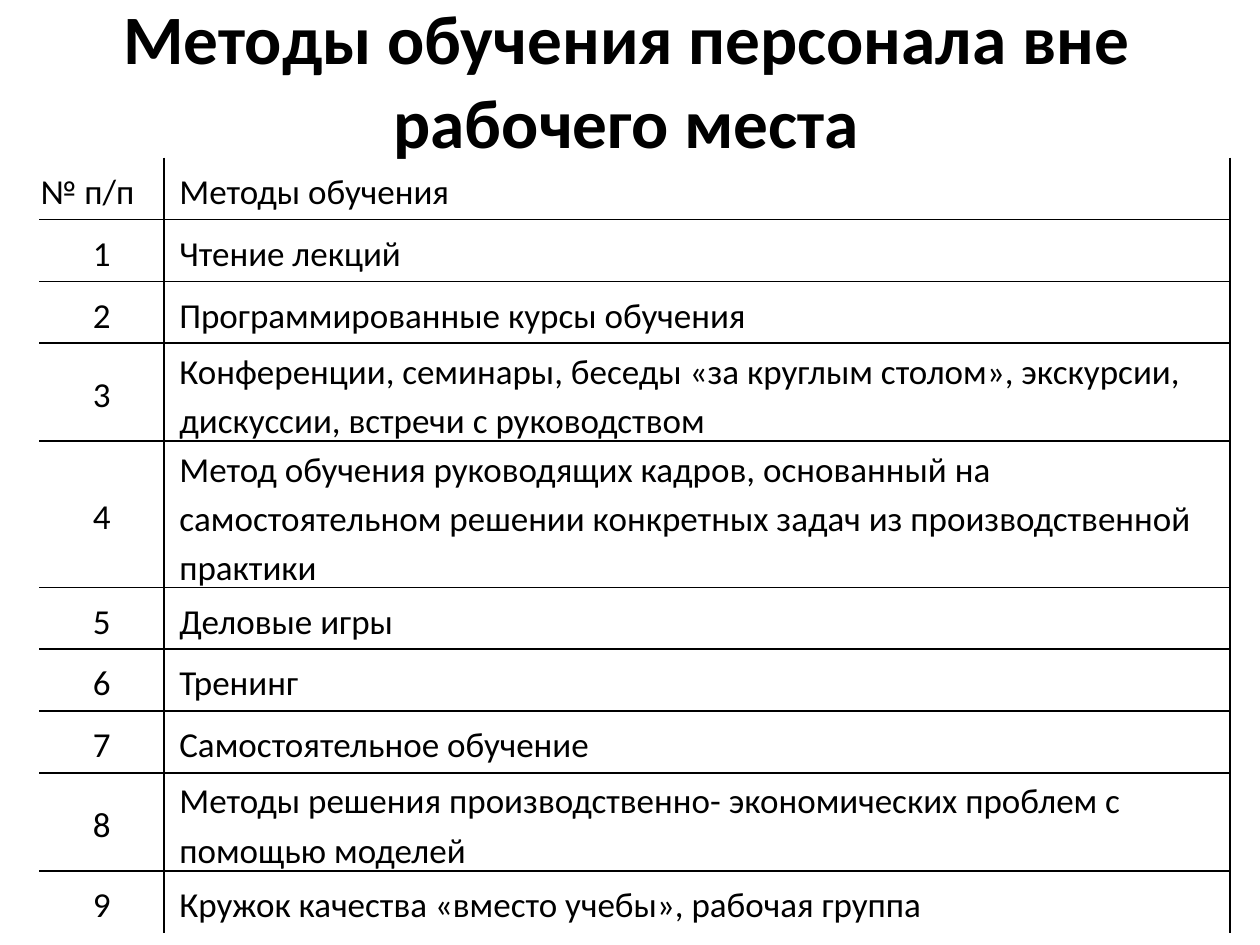
import pptx
import pptx.dml.color
import pptx.enum.text
import pptx.oxml.ns
import pptx.util
from lxml import etree

Pt = pptx.util.Pt
Align = pptx.enum.text.PP_ALIGN
Anchor = pptx.enum.text.MSO_ANCHOR
qn = pptx.oxml.ns.qn

BLACK = pptx.dml.color.RGBColor(0, 0, 0)
FONT = "Calibri"
PLAIN_TABLE_STYLE = "{2D5ABB26-0587-4C30-8999-92F81FD0307C}"

TITLE = "Методы обучения персонала вне рабочего места"
HEADER = ("№ п/п", "Методы обучения")
METHODS = [
    "Чтение лекций",
    "Программированные курсы обучения",
    "Конференции, семинары, беседы «за круглым столом», экскурсии, "
    "дискуссии, встречи с руководством",
    "Метод обучения руководящих кадров, основанный на самостоятельном "
    "решении конкретных задач из производственной практики",
    "Деловые игры",
    "Тренинг",
    "Самостоятельное обучение",
    "Методы решения производственно- экономических проблем с помощью моделей",
    "Кружок качества «вместо учебы», рабочая группа",
]
COLUMN_WIDTHS = (71.3, 609.1, 3.6)
ROW_HEIGHT = 35.4


class SlideBuilder:
    def __init__(self, slide):
        self.slide = slide

    def style(self, paragraph, size, alignment, bold=False):
        paragraph.alignment = alignment
        for run in paragraph.runs:
            font = run.font
            font.name, font.size, font.bold = FONT, Pt(size), bold
            font.color.rgb = BLACK

    def title(self, text, left, top, width, height):
        box = self.slide.shapes.add_textbox(Pt(left), Pt(top), Pt(width), Pt(height))
        frame = box.text_frame
        frame.word_wrap = True
        frame.vertical_anchor = Anchor.MIDDLE
        frame.text = text
        self.style(frame.paragraphs[0], 39.6, Align.CENTER, bold=True)

    def table(self, rows, left, top):
        """Add a ruled table with a narrow empty column on the right."""
        table = self.slide.shapes.add_table(
            len(rows), len(COLUMN_WIDTHS), Pt(left), Pt(top),
            Pt(sum(COLUMN_WIDTHS)), Pt(ROW_HEIGHT * len(rows))).table
        table.first_row = table.horz_banding = False
        table._tbl.tblPr.find(qn("a:tableStyleId")).text = PLAIN_TABLE_STYLE
        for column, width in zip(table.columns, COLUMN_WIDTHS):
            column.width = Pt(width)
        for row_index, texts in enumerate(rows):
            table.rows[row_index].height = Pt(ROW_HEIGHT)
            for column_index in range(len(COLUMN_WIDTHS)):
                cell = table.cell(row_index, column_index)
                cell.margin_left = cell.margin_right = cell.margin_top = Pt(0.7)
                cell.margin_bottom = 0
                cell.vertical_anchor = Anchor.MIDDLE
                if column_index < len(texts):
                    self.cell_text(cell, texts[column_index],
                                   centred=row_index > 0 and column_index == 0,
                                   indented=column_index == 1)
                    self.borders(cell, left=column_index == 1,
                                 right=column_index == 0,
                                 top=row_index > 0,
                                 bottom=row_index < len(rows) - 1)
                cell.fill.background()

    def cell_text(self, cell, text, centred, indented):
        cell.text_frame.text = text
        paragraph = cell.text_frame.paragraphs[0]
        paragraph.line_spacing = 1.15
        paragraph.space_after = Pt(10)
        self.style(paragraph, 20, Align.CENTER if centred else Align.LEFT)
        if indented:
            paragraph._p.get_or_add_pPr().set("marL", str(Pt(8)))

    def borders(self, cell, left, right, top, bottom):
        properties = cell._tc.get_or_add_tcPr()
        sides = {"a:lnL": left, "a:lnR": right, "a:lnT": top, "a:lnB": bottom}
        for tag, shown in sides.items():
            if shown:
                line = etree.SubElement(properties, qn(tag), w=str(Pt(1)))
                fill = etree.SubElement(line, qn("a:solidFill"))
                etree.SubElement(fill, qn("a:srgbClr"), val=str(BLACK))


def main():
    presentation = pptx.Presentation()
    presentation.slide_width, presentation.slide_height = Pt(720), Pt(540)
    slide = presentation.slides.add_slide(presentation.slide_layouts[6])
    builder = SlideBuilder(slide)
    builder.title(TITLE, 34, 0, 648, 90)
    numbered = [(str(number), text) for number, text in enumerate(METHODS, 1)]
    builder.table([HEADER] + numbered, 22.5, 90)
    presentation.save("out.pptx")


if __name__ == "__main__":
    main()
